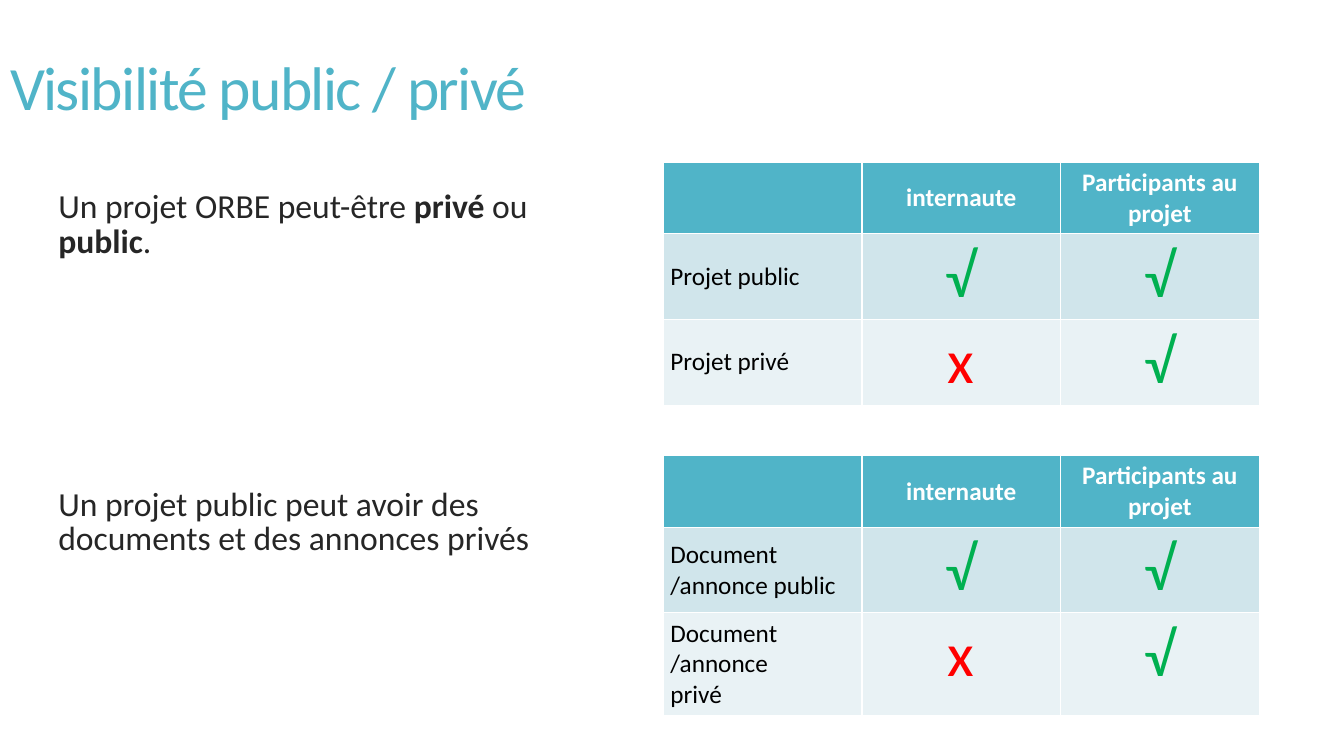
from pptx import Presentation
from pptx.dml.color import RGBColor
from pptx.enum.text import MSO_ANCHOR, PP_ALIGN
from pptx.util import Inches, Pt

FONT = "Calibri"
TEAL = RGBColor(0x50, 0xB4, 0xC8)
PALE_TEAL = RGBColor(0xD0, 0xE5, 0xEB)
PALEST_TEAL = RGBColor(0xE9, 0xF2, 0xF5)
WHITE = RGBColor(0xFF, 0xFF, 0xFF)
BLACK = RGBColor(0, 0, 0)
DARK_GREY = RGBColor(0x26, 0x26, 0x26)
GREEN = RGBColor(0, 0xB0, 0x50)
RED = RGBColor(0xFF, 0, 0)

TITLE = "Visibilité public / privé"
STATEMENTS = [
    (1.85, [("Un projet ORBE peut-être ", False), ("privé", True), (" ou ", False),
            ("public", True), (".", False)]),
    (4.8, [("Un projet public peut avoir des documents et des annonces privés", False)]),
]
HEADER = ["", "internaute", "Participants au projet"]
TABLES = [
    (1.61, [0.71, 0.85, 0.85],
     [HEADER, ["Projet public", "√", "√"], ["Projet privé", "x", "√"]]),
    (4.52, [0.71, 0.85, 1.02],
     [HEADER, ["Document /annonce public", "√", "√"],
      ["Document\n/annonce\nprivé", "x", "√"]]),
]
ROW_FILLS = [TEAL, PALE_TEAL, PALEST_TEAL]
MARK_COLORS = {"√": GREEN, "x": RED}
TABLE_LEFT, COLUMN_WIDTH = 6.58, 1.97


def set_font(font, size, color, bold=False):
    font.name = FONT
    font.size = Pt(size)
    font.color.rgb = color
    font.bold = bold


def add_title(slide):
    title = slide.shapes.title
    title.left, title.top = Inches(0), Inches(0)
    title.width, title.height = Inches(11.78), Inches(1.81)
    title.text_frame.text = TITLE
    title.text_frame.vertical_anchor = MSO_ANCHOR.MIDDLE
    paragraph = title.text_frame.paragraphs[0]
    paragraph.alignment = PP_ALIGN.LEFT
    paragraph.line_spacing = 0.85
    set_font(paragraph.font, 44, TEAL)
    paragraph.runs[0].font._element.set("spc", "-120")


def add_statement(slide, top, runs):
    box = slide.shapes.add_textbox(Inches(0.48), Inches(top), Inches(5.67), Inches(0.85))
    box.text_frame.word_wrap = True
    paragraph = box.text_frame.paragraphs[0]
    paragraph.line_spacing = 0.85
    set_font(paragraph.font, 24, DARK_GREY)
    for text, bold in runs:
        run = paragraph.add_run()
        run.text = text
        run.font.bold = bold


def format_cell(cell, text, row, column):
    cell.fill.solid()
    cell.fill.fore_color.rgb = ROW_FILLS[row]
    cell.margin_left = cell.margin_right = Inches(0.07)
    cell.margin_top = cell.margin_bottom = Inches(0.05)
    cell.text = text
    is_mark = text in MARK_COLORS
    cell.vertical_anchor = MSO_ANCHOR.TOP if is_mark else MSO_ANCHOR.MIDDLE
    for paragraph in cell.text_frame.paragraphs:
        paragraph.alignment = PP_ALIGN.CENTER if column else PP_ALIGN.LEFT
        if is_mark:
            set_font(paragraph.font, 44, MARK_COLORS[text])
        elif row == 0:
            set_font(paragraph.font, 18, WHITE, True)
        else:
            set_font(paragraph.font, 18, BLACK)


def add_visibility_table(slide, top, heights, rows):
    columns = len(HEADER)
    frame = slide.shapes.add_table(
        len(rows), columns, Inches(TABLE_LEFT), Inches(top),
        Inches(COLUMN_WIDTH * columns), Inches(sum(heights)))
    table = frame.table
    for column in table.columns:
        column.width = Inches(COLUMN_WIDTH)
    for row, (height, texts) in enumerate(zip(heights, rows)):
        table.rows[row].height = Inches(height)
        for column, text in enumerate(texts):
            format_cell(table.cell(row, column), text, row, column)


def main():
    presentation = Presentation()
    presentation.slide_width = Inches(13.33)
    presentation.slide_height = Inches(7.5)
    slide = presentation.slides.add_slide(presentation.slide_layouts[5])
    add_title(slide)
    for top, runs in STATEMENTS:
        add_statement(slide, top, runs)
    for top, heights, rows in TABLES:
        add_visibility_table(slide, top, heights, rows)
    presentation.save("out.pptx")


if __name__ == "__main__":
    main()
